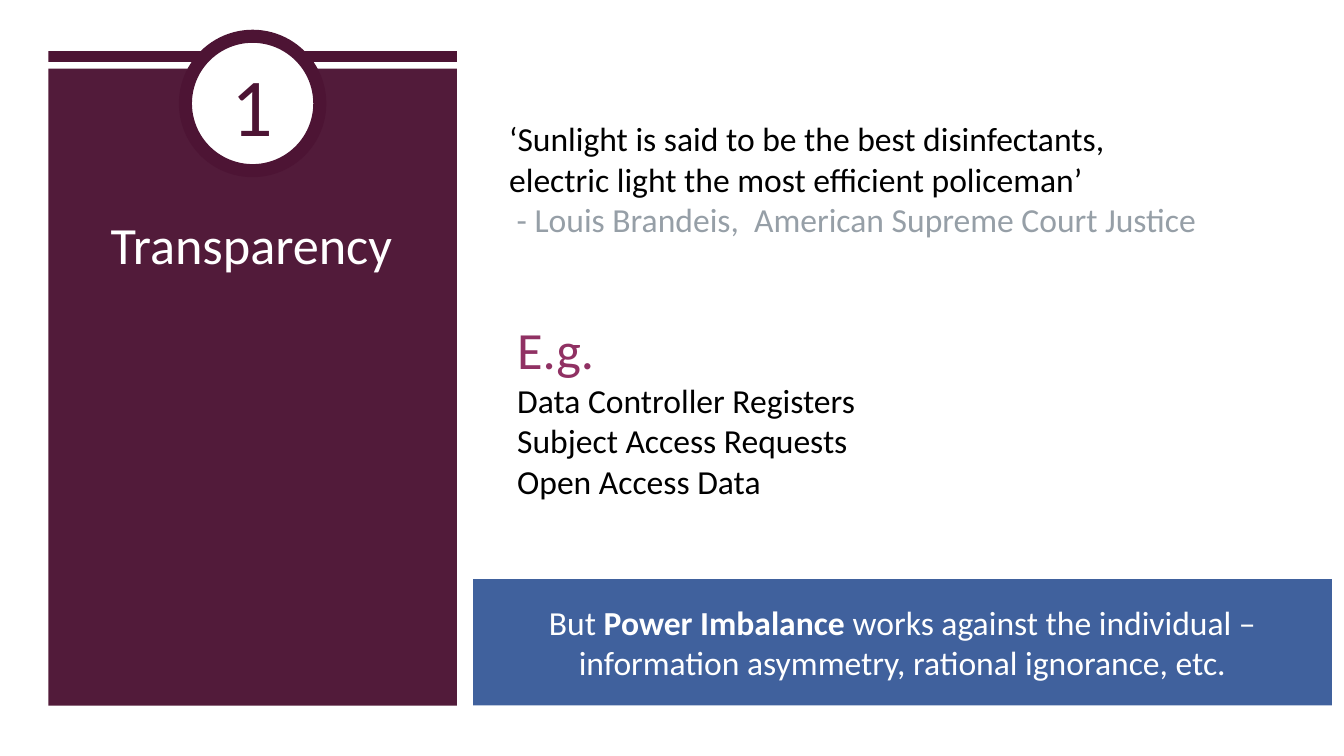
from dataclasses import dataclass

from lxml import etree
from pptx import Presentation
from pptx.dml.color import RGBColor
from pptx.enum.shapes import MSO_SHAPE
from pptx.enum.text import MSO_ANCHOR, PP_ALIGN
from pptx.oxml.ns import qn
from pptx.util import Inches, Pt

RECTANGLE, ELLIPSE = MSO_SHAPE.RECTANGLE, MSO_SHAPE.OVAL
LEFT, CENTER = PP_ALIGN.LEFT, PP_ALIGN.CENTER
TOP, MIDDLE = MSO_ANCHOR.TOP, MSO_ANCHOR.MIDDLE
WIDTH = Inches(10)
HEIGHT = WIDTH * 9 // 16


@dataclass(frozen=True)
class Theme:
    font: str = "Calibri"
    white: str = "FFFFFF"
    black: str = "000000"
    plum: str = "4D1434"
    magenta: str = "903163"
    grey: str = "969FA7"
    blue: str = "40619D"
    body: int = 18
    heading: int = 28
    number: int = 44


THEME = Theme()


@dataclass(frozen=True)
class Area:
    """Position and size in percent of the slide's width and height."""
    left: float
    top: float
    width: float
    height: float

    def lengths(self) -> list[int]:
        shares = ((self.left, WIDTH), (self.top, HEIGHT),
                  (self.width, WIDTH), (self.height, HEIGHT))
        return [round(share * whole / 100) for share, whole in shares]


@dataclass(frozen=True)
class Span:
    text: str
    color: str = THEME.black
    size: int = THEME.body
    bold: bool = False


@dataclass(frozen=True)
class Panel:
    area: Area
    fill: str
    kind: int = RECTANGLE
    opacity: int = 100
    outline: str = ""
    outline_width: float = 0
    lines: tuple[tuple[Span, ...], ...] = ()


@dataclass(frozen=True)
class Note:
    area: Area
    lines: tuple[tuple[Span, ...], ...]
    align: int = LEFT
    wrap: bool = True
    before: float = 0
    after: float = 0


def write(frame, lines, para_format: dict, frame_format: dict) -> None:
    for name, value in frame_format.items():
        setattr(frame, name, value)
    for index, spans in enumerate(lines):
        para = frame.add_paragraph() if index else frame.paragraphs[0]
        for name, value in para_format.items():
            setattr(para, name, value)
        for span in spans:
            run = para.add_run()
            run.text = span.text
            font_format = {"name": THEME.font, "size": Pt(span.size), "bold": span.bold}
            for name, value in font_format.items():
                setattr(run.font, name, value)
            run.font.color.rgb = RGBColor.from_string(span.color)


def draw_panel(page, panel: Panel) -> None:
    shape = page.shapes.add_shape(panel.kind, *panel.area.lengths())
    shape.shadow.inherit = False
    shape.fill.solid()
    shape.fill.fore_color.rgb = RGBColor.from_string(panel.fill)
    if panel.opacity < 100:
        color = shape.fill._xPr.find(qn("a:solidFill"))[0]
        etree.SubElement(color, qn("a:alpha"), val=str(panel.opacity * 1000))
    if panel.outline:
        shape.line.color.rgb = RGBColor.from_string(panel.outline)
        shape.line.width = Pt(panel.outline_width)
    else:
        shape.line.fill.background()
    write(shape.text_frame, panel.lines, {"alignment": CENTER},
          {"vertical_anchor": MIDDLE, "word_wrap": True})


def draw_note(page, note: Note) -> None:
    box = page.shapes.add_textbox(*note.area.lengths())
    para_format = {"alignment": note.align, "space_before": Pt(note.before),
                   "space_after": Pt(note.after)}
    write(box.text_frame, note.lines, para_format,
          {"vertical_anchor": TOP, "word_wrap": note.wrap})


BACKGROUND = Panel(Area(0, 0, 100, 100), THEME.white)
SIDEBAR = Panel(Area(3.6, 9.07, 30.4, 84.27), THEME.plum, opacity=97)
TOP_BAR = Panel(Area(3.6, 6.76, 30.4, 1.42), THEME.plum)
TITLE = Note(Area(5.8, 27.2, 25.8, 63.64),
             ((Span("Transparency", THEME.white, THEME.heading),),),
             align=CENTER, before=5.6, after=4.5)
BADGE = Panel(Area(13.8, 4.8, 10, 17.78), THEME.white, ELLIPSE,
              outline=THEME.plum, outline_width=7,
              lines=((Span("1", THEME.plum, THEME.number),),))
QUOTE = Note(Area(36.9, 14.76, 59.5, 17.96), (
    (Span("‘Sunlight is said to be the best disinfectants,"),),
    (Span("electric light the most efficient policeman’"),),
    (Span(" - Louis Brandeis,  American Supreme Court Justice", THEME.grey),),
))
EXAMPLES = Note(Area(37.5, 41.07, 28.6, 26.31), (
    (Span("E.g.", THEME.magenta, THEME.heading),),
    (Span("Data Controller Registers"),),
    (Span("Subject Access Requests"),),
    (Span("Open Access Data"),),
), wrap=False)
CAVEAT = Panel(Area(35.2, 76.62, 63.9, 16.71), THEME.blue, lines=((
    Span("But", THEME.white),
    Span(" Power Imbalance ", THEME.white, bold=True),
    Span("works against the individual – information asymmetry, "
         "rational ignorance, etc.", THEME.white),
),))


def main() -> None:
    deck = Presentation()
    deck.slide_width, deck.slide_height = WIDTH, HEIGHT
    page = deck.slides.add_slide(deck.slide_layouts[6])
    for item in (BACKGROUND, SIDEBAR, TOP_BAR, TITLE, BADGE, QUOTE, EXAMPLES, CAVEAT):
        draw = draw_panel if isinstance(item, Panel) else draw_note
        draw(page, item)
    deck.save("out.pptx")


if __name__ == "__main__":
    main()
